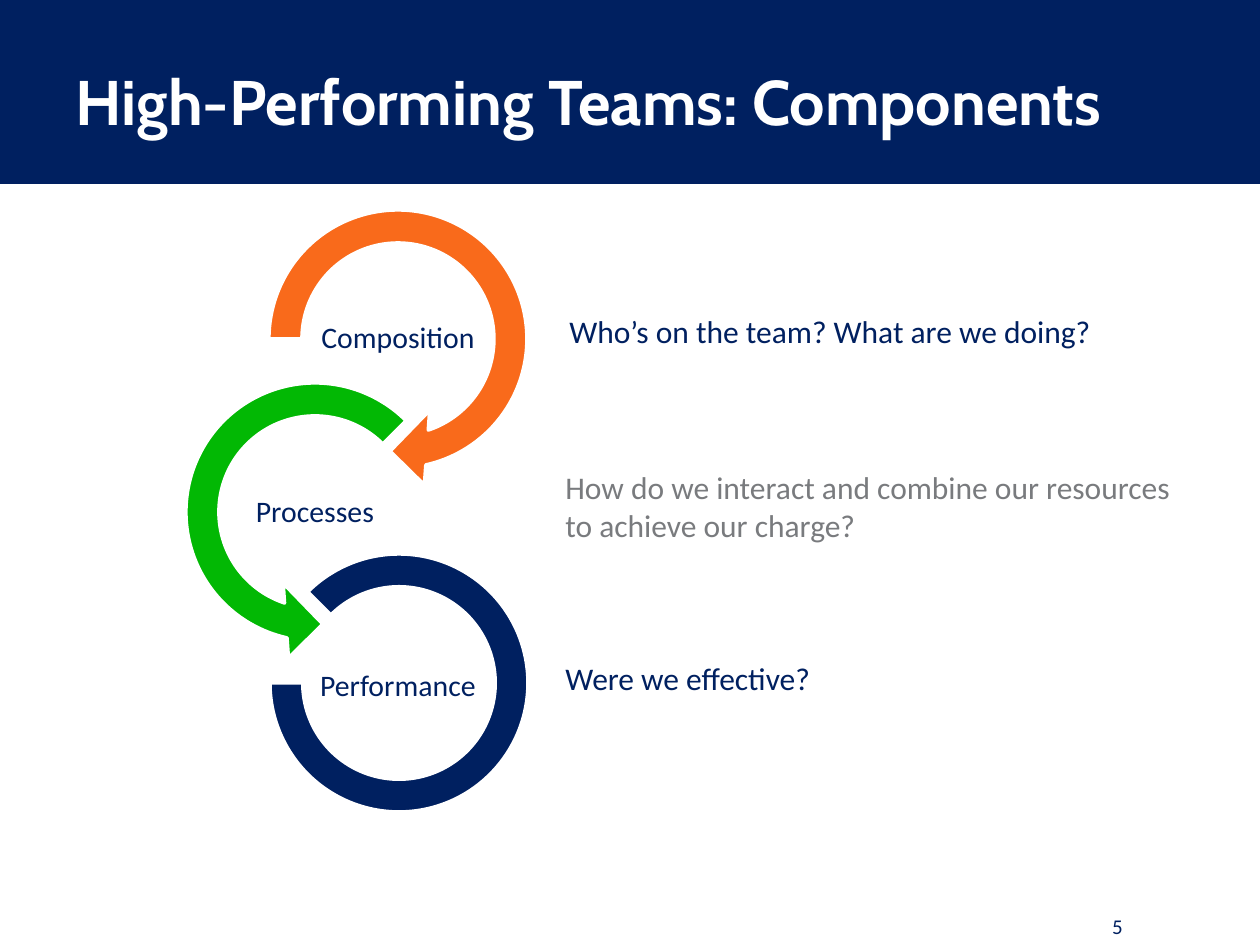
import dataclasses
import typing

import pptx
import pptx.dml.color
import pptx.enum.shapes
import pptx.enum.text
import pptx.util

RGB = pptx.dml.color.RGBColor
SHAPE = pptx.enum.shapes.MSO_SHAPE
ALIGN = pptx.enum.text.PP_ALIGN
FIT = pptx.enum.text.MSO_AUTO_SIZE
ANCHOR = pptx.enum.text.MSO_ANCHOR

NAVY = RGB(0x00, 0x20, 0x60)
WHITE = RGB(0xFF, 0xFF, 0xFF)
ORANGE = RGB(0xF9, 0x6A, 0x1B)
GREEN = RGB(0x02, 0xB8, 0x04)
GRAY = RGB(0x79, 0x7B, 0x7E)

Box = tuple[int, int, int, int]


@dataclasses.dataclass(frozen=True)
class Ring:
    kind: SHAPE
    box: Box
    turns: tuple[float, ...]
    color: RGB


@dataclasses.dataclass(frozen=True)
class Text:
    words: str
    box: Box
    size: int = 18
    color: RGB = NAVY
    font: str = "Calibri"
    bold: bool = False
    align: ALIGN = ALIGN.LEFT
    middle: bool = False
    inset: int | None = None
    leading: float | None = None
    grow: bool = False


def px(count: int) -> int:
    return round(count * 914400 / 126)


def draw_shape(shapes: typing.Any, kind: SHAPE, box: Box, color: RGB) -> typing.Any:
    shape = shapes.add_shape(kind, *map(px, box))
    shape.shadow.inherit = False
    shape.fill.solid()
    shape.fill.fore_color.rgb = color
    shape.line.fill.background()
    return shape


def draw_ring(shapes: typing.Any, ring: Ring) -> None:
    shape = draw_shape(shapes, ring.kind, ring.box, ring.color)
    shape.line.color.rgb = WHITE
    shape.line.width = pptx.util.Pt(2)
    for index, turn in enumerate(ring.turns):
        shape.adjustments[index] = turn


def draw_text(shapes: typing.Any, text: Text) -> None:
    frame = shapes.add_textbox(*map(px, text.box)).text_frame
    frame.word_wrap = True
    frame.auto_size = FIT.SHAPE_TO_FIT_TEXT if text.grow else FIT.NONE
    frame.vertical_anchor = ANCHOR.MIDDLE if text.middle else ANCHOR.TOP
    if text.inset is not None:
        frame.margin_left = frame.margin_right = px(text.inset)
        frame.margin_top = frame.margin_bottom = px(text.inset)
    line = frame.paragraphs[0]
    line.alignment = text.align
    if text.leading:
        line.line_spacing = text.leading
    run = line.add_run()
    run.text = text.words
    run.font.name = text.font
    run.font.size = pptx.util.Pt(text.size)
    run.font.bold = text.bold
    run.font.color.rgb = text.color


def label(words: str, left: int, top: int) -> Text:
    return Text(words, (left, top, 166, 83), 17, align=ALIGN.CENTER,
                middle=True, inset=1, leading=0.9)


STEPS = (
    (Ring(SHAPE.CIRCULAR_ARROW, (248, 189, 300, 300),
          (0.11, 11.42, 45, 108, 0.125), ORANGE),
     label("Composition", 315, 297)),
    (Ring(SHAPE.LEFT_CIRCULAR_ARROW, (165, 362, 300, 300),
          (0.11, 11.42, 63, 189, 0.125), GREEN),
     label("Processes", 232, 471)),
    (Ring(SHAPE.BLOCK_ARC, (270, 554, 258, 258), (135, 108, 0.127), NAVY),
     label("Performance", 315, 645)),
)

TITLE = Text("High-Performing Teams: Components", (63, 21, 1176, 158), 36,
             WHITE, "Cabin", bold=True, middle=True)
NUMBER = Text("5", (1081, 907, 73, 38), 12, align=ALIGN.CENTER, middle=True)
NOTES = (
    Text("Who’s on the team? What are we doing?", (557, 306, 599, 50), grow=True),
    Text("Were we effective?", (553, 653, 274, 50), grow=True),
    Text("How do we interact and combine our resources to achieve our charge?",
         (553, 462, 644, 89), color=GRAY, grow=True),
)


def main() -> None:
    deck = pptx.Presentation()
    deck.slide_width = px(1260)
    deck.slide_height = px(945)
    shapes = deck.slides.add_slide(deck.slide_layouts[6]).shapes
    draw_shape(shapes, SHAPE.RECTANGLE, (0, 0, 1260, 184), NAVY)
    draw_text(shapes, NUMBER)
    draw_text(shapes, TITLE)
    group = shapes.add_group_shape().shapes
    for ring, name in STEPS:
        draw_ring(group, ring)
        draw_text(group, name)
    for note in NOTES:
        draw_text(shapes, note)
    deck.save("out.pptx")


if __name__ == "__main__":
    main()
